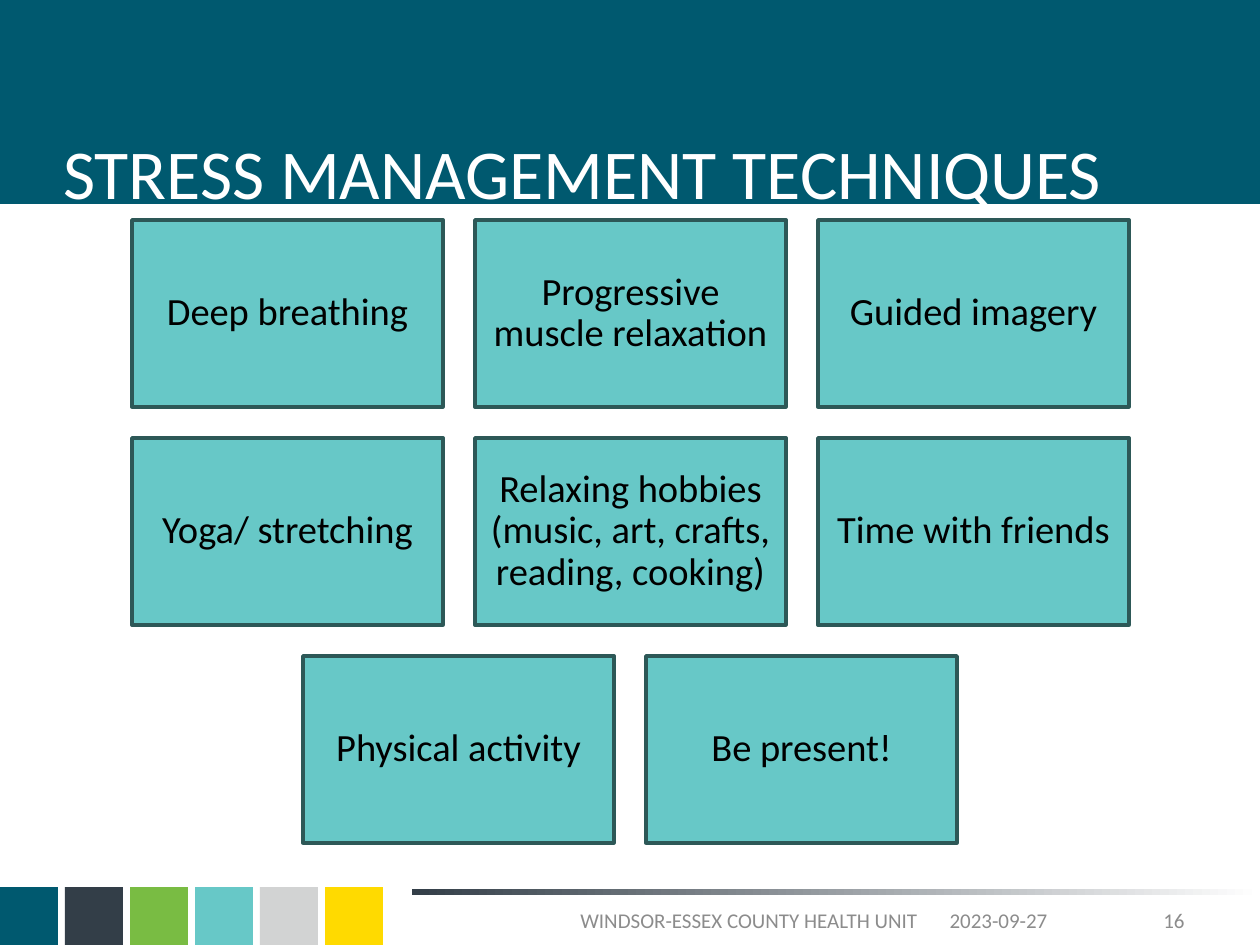
from dataclasses import dataclass

from pptx import Presentation
from pptx.dml.color import RGBColor
from pptx.enum.shapes import MSO_SHAPE
from pptx.enum.text import MSO_ANCHOR, PP_ALIGN
from pptx.shapes.autoshape import Shape
from pptx.slide import Slide
from pptx.util import Emu, Pt

EMU_PER_PX = 914400 / 126
FONT = "Calibri"
COLOURS = {
    "petrol": "00596F",
    "slate": "333E48",
    "green": "79BC43",
    "aqua": "67C8C7",
    "silver": "D2D3D3",
    "yellow": "FFDA00",
    "outline": "2D5857",
    "grey": "8C8C8C",
    "white": "FFFFFF",
    "black": "000000",
}
SWATCHES = ["petrol", "slate", "green", "aqua", "silver", "yellow"]
TECHNIQUES = [
    ["Deep breathing", "Progressive muscle relaxation", "Guided imagery"],
    ["Yoga/ stretching", "Relaxing hobbies (music, art, crafts, reading, cooking)",
     "Time with friends"],
    ["Physical activity", "Be present!"],
]
TILE_WIDTH, TILE_HEIGHT, TILE_GAP = 311, 187, 32
GRID_CENTRE, GRID_TOP = 630, 220


@dataclass
class Area:
    left: int
    top: int
    width: int
    height: int

    def emu(self) -> list[Emu]:
        return [px(n) for n in (self.left, self.top, self.width, self.height)]


@dataclass
class FooterItem:
    text: str
    area: Area
    align: PP_ALIGN


FOOTER = [
    FooterItem("2023-09-27", Area(914, 895, 169, 50), PP_ALIGN.CENTER),
    FooterItem("WINDSOR-ESSEX COUNTY HEALTH UNIT", Area(412, 895, 674, 50), PP_ALIGN.CENTER),
    FooterItem("16", Area(1086, 895, 111, 50), PP_ALIGN.RIGHT),
]


def px(length: int) -> Emu:
    return Emu(round(length * EMU_PER_PX))


def colour(name: str) -> RGBColor:
    return RGBColor.from_string(COLOURS[name])


def add_block(page: Slide, area: Area, fill: str) -> Shape:
    """Add a flat rectangle without outline or shadow."""
    block = page.shapes.add_shape(MSO_SHAPE.RECTANGLE, *area.emu())
    block.shadow.inherit = False
    block.fill.solid()
    block.fill.fore_color.rgb = colour(fill)
    block.line.fill.background()
    return block


def write(box: Shape, text: str, size: int, ink: str, align: PP_ALIGN,
          anchor: MSO_ANCHOR = MSO_ANCHOR.MIDDLE, inset: int | None = None) -> None:
    frame = box.text_frame
    frame.text = text
    frame.word_wrap = True
    frame.vertical_anchor = anchor
    if inset is not None:
        frame.margin_left = frame.margin_right = px(inset)
        frame.margin_top = frame.margin_bottom = px(inset)
    para = frame.paragraphs[0]
    para.alignment = align
    font = para.runs[0].font
    font.name, font.size = FONT, Pt(size)
    font.color.rgb = colour(ink)


def add_header(page: Slide) -> None:
    band = add_block(page, Area(0, 0, 1260, 204), "petrol")
    title = page.shapes.title
    title.left, title.top, title.width, title.height = Area(63, 38, 1134, 176).emu()
    write(title, "STRESS MANAGEMENT TECHNIQUES", 40, "white", PP_ALIGN.LEFT,
          MSO_ANCHOR.BOTTOM, inset=0)
    band.element.addnext(title.element)


def add_footer(page: Slide) -> None:
    for index, name in enumerate(SWATCHES):
        add_block(page, Area(index * 65, 887, 58, 58), name)
    rule = add_block(page, Area(412, 889, 848, 6), "slate")
    rule.fill.gradient()
    rule.fill.gradient_angle = 0
    for stop, position, name in zip(rule.fill.gradient_stops, (0, 1), ("slate", "white")):
        stop.position = position
        stop.color.rgb = colour(name)
    for item in FOOTER:
        box = page.shapes.add_textbox(*item.area.emu())
        write(box, item.text, 12, "grey", item.align)


def add_techniques(page: Slide) -> None:
    """Lay out the tiles row by row, each row centred."""
    for row, labels in enumerate(TECHNIQUES):
        row_width = len(labels) * (TILE_WIDTH + TILE_GAP) - TILE_GAP
        left = GRID_CENTRE - row_width // 2
        top = GRID_TOP + row * (TILE_HEIGHT + TILE_GAP - 1)
        for column, label in enumerate(labels):
            area = Area(left + column * (TILE_WIDTH + TILE_GAP), top, TILE_WIDTH, TILE_HEIGHT)
            tile = add_block(page, area, "aqua")
            tile.line.color.rgb = colour("outline")
            tile.line.width = Pt(2)
            write(tile, label, 22, "black", PP_ALIGN.CENTER, inset=11)
            tile.text_frame.paragraphs[0].line_spacing = 0.9


def main() -> None:
    deck = Presentation()
    deck.slide_width, deck.slide_height = px(1260), px(945)
    page = deck.slides.add_slide(deck.slide_layouts[5])
    add_header(page)
    add_footer(page)
    add_techniques(page)
    deck.save("out.pptx")


if __name__ == "__main__":
    main()
